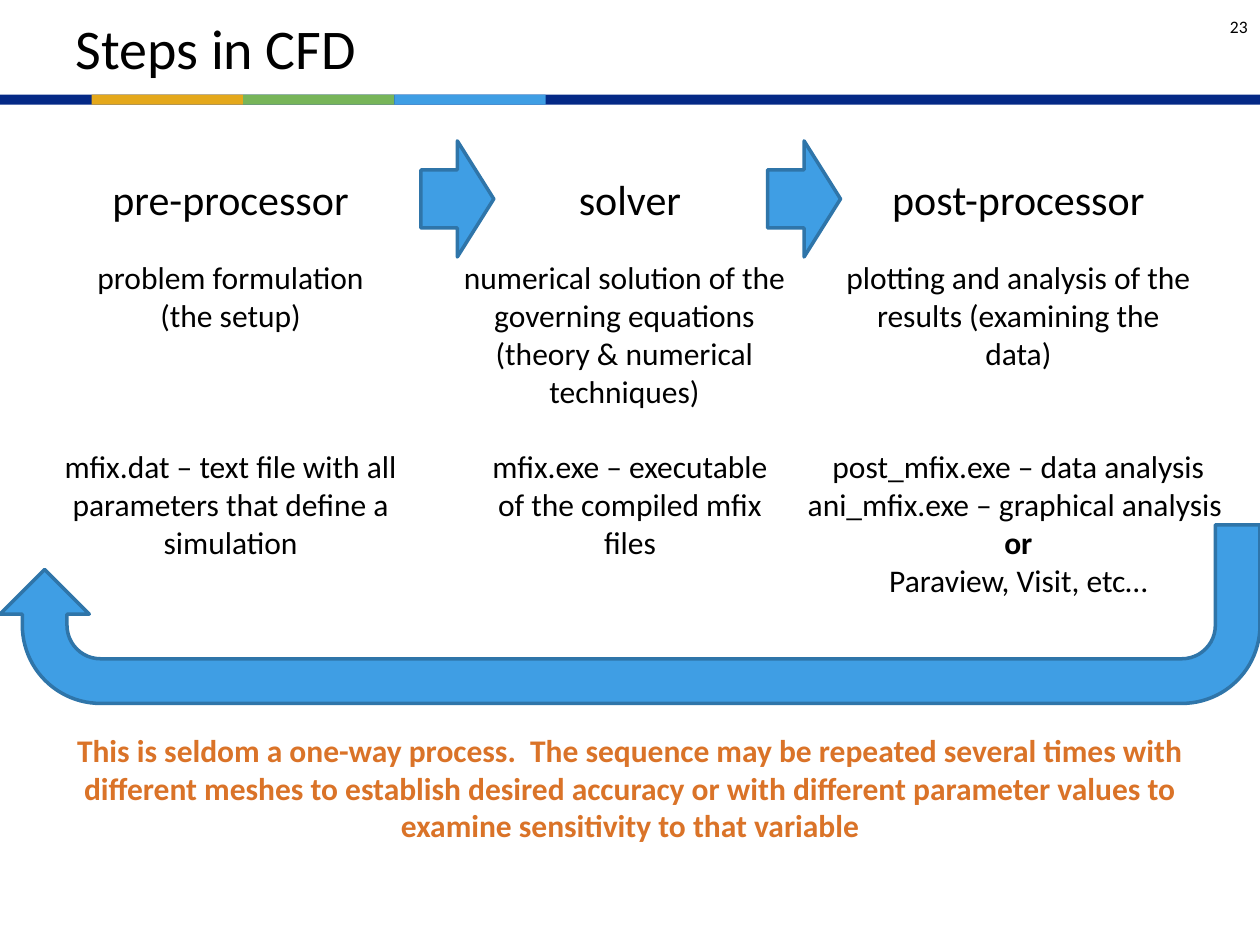
from pptx import Presentation
from pptx.dml.color import RGBColor
from pptx.enum.shapes import MSO_SHAPE
from pptx.enum.text import MSO_ANCHOR, PP_ALIGN
from pptx.util import Cm, Pt

# Content: each step has (paragraphs, centre, width) for heading, purpose, files
TITLE = "Steps in CFD"
PAGE = "23"
STEPS = [
    [(["pre-processor"], 4.65, 5.5),
     (["problem formulation (the setup)"], 4.65, 6.35),
     (["mfix.dat – text file with all parameters that define a simulation"], 4.65, 7.62)],
    [(["solver"], 12.7, 4),
     (["numerical solution of the governing equations "
       "(theory & numerical techniques)"], 12.59, 6.98),
     (["mfix.exe – executable of the compiled mfix files"], 12.7, 6.15)],
    [(["post-processor"], 20.53, 6),
     (["plotting and analysis of the results (examining the data)"], 20.53, 7.62),
     (["post_mfix.exe – data analysis", "ani_mfix.exe – graphical analysis ",
       "or", "Paraview, Visit, etc…"], 20.53, 10.16)],
]
CONCLUSION = ("This is seldom a one-way process.  The sequence may be repeated several "
              "times with different meshes to establish desired accuracy or with different "
              "parameter values to examine sensitivity to that variable")

# Layout and formats, in centimetres and points
SLIDE_W, SLIDE_H = 25.4, 19.05
NAVY, GOLD, GREEN, BLUE, DARK_BLUE, ORANGE = (
    "042986", "E4A81B", "77B559", "3F9EE4", "2F75A9", "DA7328")
BAR_TOP, BAR_H = 1.91, 0.2
STRIPE_LEFT, STRIPE_W = 1.85, 3.05
ROWS = [(3.38, 1.27, 24), (5.08, 3.33, 18), (8.89, 4.11, 18)]  # top, height, size
ARROW_CENTRES, ARROW_Y, ARROW_W, ARROW_H = (9.22, 16.21), 4.01, 2.34, 1.47

presentation = Presentation()
presentation.slide_width, presentation.slide_height = Cm(SLIDE_W), Cm(SLIDE_H)
slide = presentation.slides.add_slide(presentation.slide_layouts[5])


def rgb(code):
    return RGBColor.from_string(code)


def apply(target, formats):
    for name, value in formats.items():
        setattr(target, name, value)


def write(frame, lines, size, color="000000", align=PP_ALIGN.CENTER,
          bold_lines=(), **frame_formats):
    apply(frame, {"word_wrap": True, **frame_formats})
    frame.text = "\n".join(lines)
    for paragraph in frame.paragraphs:
        paragraph.alignment = align
        apply(paragraph.font, {"name": "Calibri", "size": Pt(size),
                               "bold": paragraph.text in bold_lines})
        paragraph.font.color.rgb = rgb(color)


def add_text(left, top, width, height, lines, size, **formats):
    box = slide.shapes.add_textbox(Cm(left), Cm(top), Cm(width), Cm(height))
    write(box.text_frame, lines, size, **formats)


def add_block(preset, left, top, width, height, fill, outline=None, rotation=0):
    block = slide.shapes.add_shape(preset, Cm(left), Cm(top), Cm(width), Cm(height))
    block.shadow.inherit = False
    block.rotation = rotation
    block.fill.solid()
    block.fill.fore_color.rgb = rgb(fill)
    if outline:
        block.line.color.rgb = rgb(outline)
        block.line.width = Pt(2)
    else:
        block.line.fill.background()


# Header: page number, coloured bar, title
add_text(23.93, 0, 1.47, 1.07, [PAGE], 10, align=PP_ALIGN.RIGHT,
         vertical_anchor=MSO_ANCHOR.MIDDLE)
add_block(MSO_SHAPE.RECTANGLE, 0, BAR_TOP, SLIDE_W, BAR_H, NAVY)
for index, color in enumerate((GOLD, GREEN, BLUE)):
    add_block(MSO_SHAPE.RECTANGLE, STRIPE_LEFT + index * STRIPE_W, BAR_TOP,
              STRIPE_W, BAR_H, color)
title = slide.shapes.title
apply(title, {"left": Cm(1.27), "top": Cm(0), "width": Cm(22.86), "height": Cm(1.91)})
write(title.text_frame, [TITLE], 32, align=PP_ALIGN.LEFT,
      vertical_anchor=MSO_ANCHOR.MIDDLE, margin_top=Cm(0.25), margin_bottom=Cm(0.25))

# Three steps, one column each
for step in STEPS:
    for (lines, centre, width), (top, height, size) in zip(step, ROWS):
        add_text(centre - width / 2, top, width, height, lines, size, bold_lines=("or",))

# Conclusion
add_text(0.64, 14.61, 24.13, 2.57, [CONCLUSION], 18, color=ORANGE,
         bold_lines=(CONCLUSION,))

# Arrows between the steps and back to the start
for centre in ARROW_CENTRES:
    add_block(MSO_SHAPE.DOWN_ARROW, centre - ARROW_W / 2, ARROW_Y - ARROW_H / 2,
              ARROW_W, ARROW_H, BLUE, DARK_BLUE, rotation=270)
add_block(MSO_SHAPE.U_TURN_ARROW, 0, 10.58, SLIDE_W, 3.6, BLUE, DARK_BLUE, rotation=180)

presentation.save("out.pptx")
